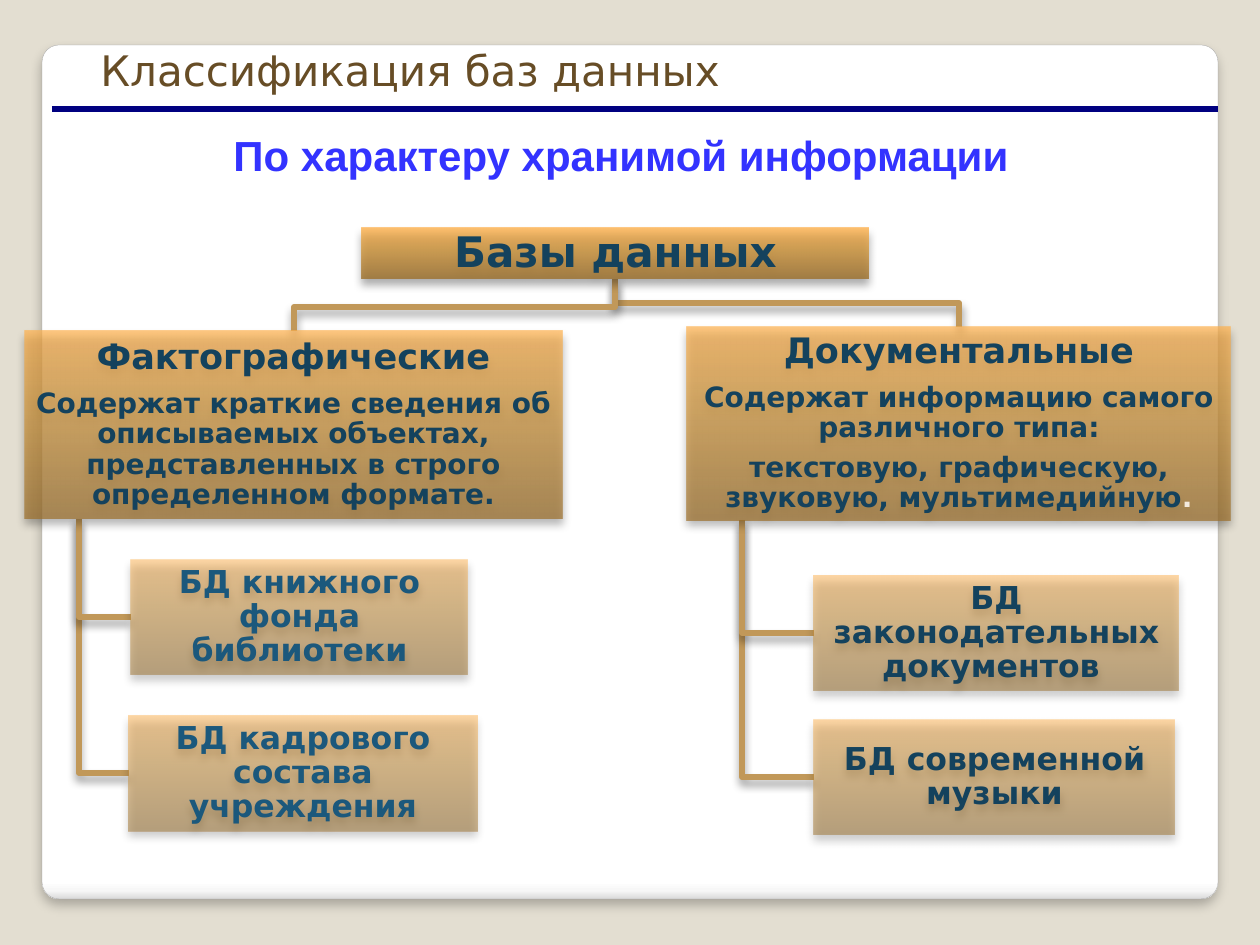
from pptx import Presentation
from pptx import util as u
from pptx.dml.color import RGBColor
from pptx.enum import shapes, text
from pptx.oxml import ns
from lxml import etree

SCALE = 914400 / 126
SAND = RGBColor(0xE3, 0xDE, 0xD1)
WHITE = RGBColor(0xFF, 0xFF, 0xFF)
PALE = RGBColor(0xF7, 0xF7, 0xF7)
SILVER = RGBColor(0xDA, 0xDA, 0xDA)
GREY = RGBColor(0xA4, 0xA4, 0xA4)
BLACK = RGBColor(0, 0, 0)
NAVY = RGBColor(0, 0, 0x80)
BLUE = RGBColor(0x33, 0x33, 0xFF)
BROWN = RGBColor(0x67, 0x4D, 0x26)
TAN = RGBColor(0xC1, 0x98, 0x59)
INK = RGBColor(0x14, 0x42, 0x5D)
TEAL = RGBColor(0x1B, 0x58, 0x7C)
CREAM = RGBColor(0xF3, 0xEA, 0xDE)
GOLD = [
    (0, RGBColor(0x9D, 0x70, 0x2B)),
    (60, RGBColor(0xD6, 0x9A, 0x3E)),
    (100, RGBColor(0xFF, 0xB1, 0x4C)),
]
PAPER = [(0, WHITE), (98, WHITE), (99, PALE), (100, SILVER)]


def px(length):
    return u.Emu(round(length * SCALE))


def add_child(parent, tag, **attributes):
    values = {name: str(value) for name, value in attributes.items()}
    return etree.SubElement(parent, ns.qn(f"a:{tag}"), values)


def add_colour(parent, colour, opacity):
    element = add_child(parent, "srgbClr", val=colour)
    add_child(element, "alpha", val=opacity * 1000)


class Diagram:
    """Draws the parts of a tree of boxes on one slide."""

    font = "DejaVu Sans"

    def __init__(self, slide):
        self.slide = slide
        self.shapes = slide.shapes

    def background(self, colour):
        self.slide.background.fill.solid()
        self.slide.background.fill.fore_color.rgb = colour

    def gradient(self, shape, stops, angle, opacity=100):
        shape.fill.gradient()
        shape.fill.gradient_angle = angle
        stop_list = shape._element.spPr.find(".//" + ns.qn("a:gsLst"))
        for stop in list(stop_list):
            stop_list.remove(stop)
        for position, colour in stops:
            stop = add_child(stop_list, "gs", pos=position * 1000)
            add_colour(stop, colour, opacity)

    def shadow(self, shape, blur=5.2, distance=3, opacity=40):
        shape.shadow.inherit = False
        effects = shape._element.spPr.find(ns.qn("a:effectLst"))
        outer = add_child(effects, "outerShdw", blurRad=u.Pt(blur),
                          dist=u.Pt(distance), dir=5400000, rotWithShape=0)
        add_colour(outer, BLACK, opacity)

    def card(self, left, top, width, height):
        card = self.shapes.add_shape(shapes.MSO_SHAPE.ROUNDED_RECTANGLE,
                                     px(left), px(top), px(width), px(height))
        card.adjustments[0] = 0.02
        self.gradient(card, PAPER, 270)
        card.line.color.rgb = GREY
        card.line.width = u.Pt(0.16)
        self.shadow(card, blur=6, distance=4, opacity=25)

    def rule(self, left, right, y):
        rule = self.shapes.add_connector(shapes.MSO_CONNECTOR.STRAIGHT,
                                         px(left), px(y), px(right), px(y))
        rule.line.color.rgb = NAVY
        rule.line.width = u.Pt(3)
        add_child(rule._element.spPr, "effectLst")

    def heading(self, left, top, width, height, words, colour, font, before,
                align=text.PP_ALIGN.LEFT, bold=False):
        box = self.shapes.add_textbox(px(left), px(top), px(width), px(height))
        box.text_frame.word_wrap = True
        para = box.text_frame.paragraphs[0]
        para.alignment = align
        para.space_before = u.Pt(before)
        self.fill_para(para, words, 24, colour, bold, font)

    def fill_para(self, para, words, size, colour, bold=True, font=font):
        para.add_run().text = words
        para.font.name = font
        para.font.size = u.Pt(size)
        para.font.bold = bold
        para.font.color.rgb = colour

    def branch(self, *points):
        builder = self.shapes.build_freeform(*points[0], scale=SCALE)
        builder.add_line_segments(points[1:], close=False)
        branch = builder.convert_to_shape()
        branch.fill.background()
        branch.line.color.rgb = TAN
        branch.line.width = u.Pt(3.35)
        self.shadow(branch)

    def node(self, left, top, width, height, lines, opacity, colour=INK):
        node = self.shapes.add_shape(shapes.MSO_SHAPE.RECTANGLE,
                                     px(left), px(top), px(width), px(height))
        self.gradient(node, GOLD, 90, opacity)
        node.line.fill.background()
        self.shadow(node)
        frame = node.text_frame
        frame.word_wrap = True
        frame.vertical_anchor = text.MSO_ANCHOR.MIDDLE
        frame.margin_left = frame.margin_right = px(1)
        frame.margin_top = frame.margin_bottom = px(1)
        for index, (words, size) in enumerate(lines):
            para = frame.add_paragraph() if index else frame.paragraphs[0]
            para.alignment = text.PP_ALIGN.CENTER
            para.line_spacing = 0.9
            para.space_after = u.Pt(size * 0.35)
            self.fill_para(para, words, size, colour)
        return para


def main():
    deck = Presentation()
    deck.slide_width, deck.slide_height = px(1260), px(945)
    page = Diagram(deck.slides.add_slide(deck.slide_layouts[6]))
    page.background(SAND)
    page.card(42, 45, 1176, 854)
    page.rule(52, 1218, 109)
    page.heading(25, 123, 1192, 178, "По характеру хранимой информации", BLUE,
                 "Arial", 3, text.PP_ALIGN.CENTER, bold=True)
    page.heading(88, 38, 751, 62, "Классификация баз данных", BROWN,
                 Diagram.font, 2)

    factual = [
        ("Фактографические", 20),
        ("Содержат краткие сведения об описываемых объектах, "
         "представленных в строго определенном формате.", 16),
    ]
    documentary = [
        ("Документальные", 20),
        ("Содержат информацию самого различного типа:", 16),
        ("текстовую, графическую, звуковую, мультимедийную", 16),
    ]
    leaves = [
        (131, 560, 337, "БД книжного фонда библиотеки", TEAL, 79, 519),
        (129, 716, 348, "БД кадрового состава учреждения", TEAL, 79, 519),
        (814, 576, 365, "БД законодательных документов ", INK, 742, 520),
        (814, 720, 361, "БД современной музыки", INK, 742, 520),
    ]
    leaf_height = 115

    for left, top, _, _, _, stem, start in reversed(leaves):
        middle = top + leaf_height // 2
        page.branch((stem, start), (stem, middle), (left, middle))
    for centre, bend, end in [(959, 303, 327), (294, 307, 331)]:
        page.branch((615, 279), (615, bend), (centre, bend), (centre, end))

    page.node(362, 228, 507, 51, [("Базы данных", 24)], 80)
    page.node(25, 331, 537, 188, factual, 70)
    closing = page.node(687, 327, 544, 193, documentary, 70)
    stop = closing.add_run()
    stop.text = "."
    stop.font.color.rgb = CREAM
    for left, top, width, words, colour, _, _ in leaves:
        page.node(left, top, width, leaf_height, [(words, 18)], 50, colour)
    deck.save("out.pptx")


if __name__ == "__main__":
    main()
